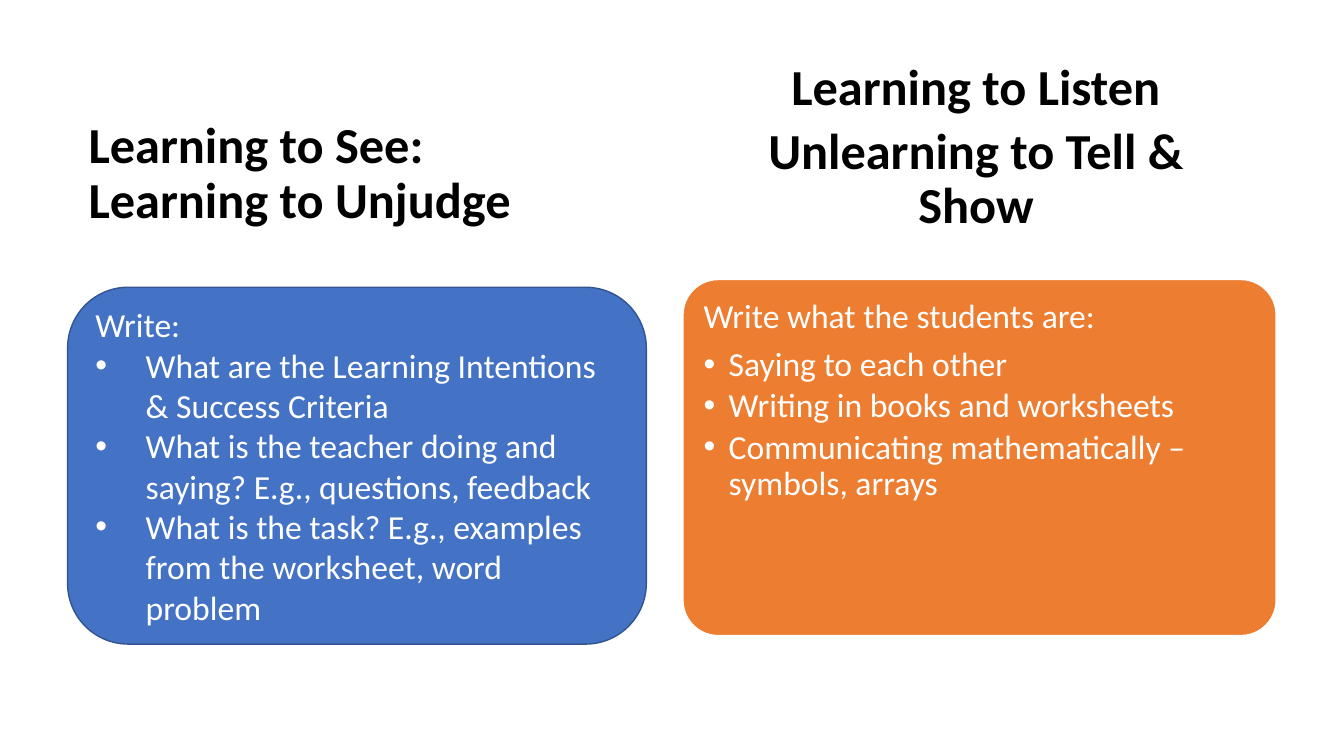
from lxml.etree import SubElement
from pptx import Presentation
from pptx.dml.color import RGBColor
from pptx.enum.shapes import MSO_SHAPE
from pptx.enum.text import MSO_ANCHOR, PP_ALIGN
from pptx.oxml.ns import qn
from pptx.util import Inches, Pt

deck = Presentation()
deck.slide_width, deck.slide_height = Inches(13.33), Inches(7.5)
slide = deck.slides.add_slide(deck.slide_layouts[6])
column, row = deck.slide_width / 100, deck.slide_height / 100


def place(left, top, width, height):
    return [int(n) for n in (left * column, top * row, width * column, height * row)]


def write(frame, lines, size, color, bold=False, align=PP_ALIGN.LEFT, anchor=MSO_ANCHOR.MIDDLE,
          leading=0.9, before=0, after=(0, 0), indent=0, level=0):
    frame.word_wrap = True
    frame.vertical_anchor = anchor
    for i, line in enumerate(lines):
        para = frame.paragraphs[0] if i == 0 else frame.add_paragraph()
        para.text = line
        para.alignment = align
        para.line_spacing = leading
        para.space_before = Pt(before if i else 0)
        para.space_after = Pt(after[min(i, 1)])
        if indent and i:
            para.level = level
            props = para._p.get_or_add_pPr()
            props.set("marL", str(Inches(indent)))
            props.set("indent", str(-Inches(indent)))
            SubElement(props, qn("a:buFont"), typeface="Arial")
            SubElement(props, qn("a:buChar"), char="•")
        para.font.name = "Calibri"
        para.font.size = Pt(size)
        para.font.bold = bold
        para.font.color.rgb = RGBColor.from_string(color)


see_heading = slide.shapes.add_textbox(*place(5.85, 14.8, 33.46, 16.67))
write(see_heading.text_frame, ["Learning to See: Learning to Unjudge"], 36, "000000", bold=True)

listen_heading = slide.shapes.add_textbox(*place(52.14, 14.8, 40.96, 16.93))
write(listen_heading.text_frame, ["Learning to Listen", "Unlearning to Tell & Show"], 36, "000000",
      bold=True, align=PP_ALIGN.CENTER, anchor=MSO_ANCHOR.BOTTOM, before=7.2)

panels = []
for left, top, width, fill, edge, edge_width, corner in [
    (50.79, 36.93, 44.19, "ED7D31", "FFFFFF", 1.5, 0.1),
    (5.03, 38, 43.06, "4472C4", "325491", 1, 0.17),
]:
    panel = slide.shapes.add_shape(MSO_SHAPE.ROUNDED_RECTANGLE, *place(left, top, width, 47.2))
    panel.adjustments[0] = corner
    panel.shadow.inherit = False
    panel.fill.solid()
    panel.fill.fore_color.rgb = RGBColor.from_string(fill)
    panel.line.color.rgb = RGBColor.from_string(edge)
    panel.line.width = Pt(edge_width)
    panels.append(panel)
listen_panel, see_panel = panels

write(see_panel.text_frame, [
    "Write:",
    "What are the Learning Intentions & Success Criteria",
    "What is the teacher doing and saying? E.g., questions, feedback",
    "What is the task? E.g., examples from the worksheet, word problem",
], 24, "FFFFFF", leading=1.0, indent=0.5)

listen_prompts = slide.shapes.add_textbox(*place(51.61, 38.27, 42.69, 44.4)).text_frame
listen_prompts.margin_top = listen_prompts.margin_bottom = Inches(0.1)
write(listen_prompts, [
    "Write what the students are:",
    "Saying to each other",
    "Writing in books and worksheets",
    "Communicating mathematically – symbols, arrays",
], 24, "FFFFFF", anchor=MSO_ANCHOR.TOP, after=(8.4, 3.6), indent=0.25, level=1)

deck.save("out.pptx")
